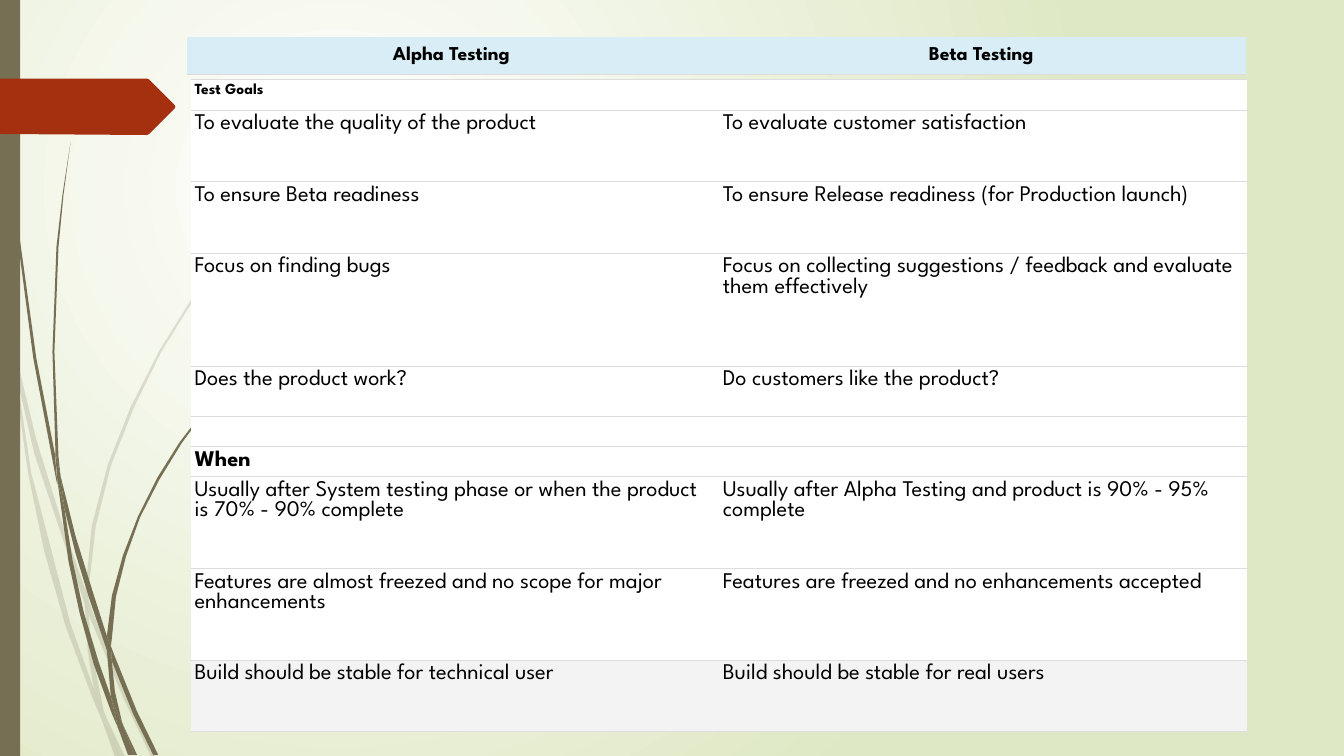
import pptx
import pptx.util
import pptx.dml.color
import pptx.enum.shapes
import pptx.enum.text
import pptx.oxml
import pptx.oxml.ns
import lxml.etree

COLS, ROWS = 1333, 750
FONT = "League Spartan"
OLIVE, RUST, WHITE, GREEN = "766F54", "A53010", "FFFFFF", "DFE8C4"
BLACK, GREY, BLUE, RULE = "000000", "F3F3F3", "D9EDF7", "DDDDDD"

PALE = [
    [(11, 350), (9, 322), (0, 282), (0, 299), (10, 344)],
    [(58, 522), (84, 599), (85, 586), (62, 520), (36, 436), (14, 345), (17, 376), (34, 450)],
    [(92, 607), (88, 596), (88, 610), (123, 694), (150, 751), (155, 751), (127, 692)],
    [(119, 751), (124, 751), (105, 711)],
    [(93, 683), (70, 619), (31, 469), (17, 376), (11, 350), (28, 470), (44, 547),
     (65, 621), (92, 693), (101, 714), (99, 707)],
    [(84, 599), (87, 646), (93, 683), (96, 692), (105, 711), (103, 706), (91, 646),
     (88, 610), (88, 608)],
    [(88, 584), (95, 522), (110, 462), (133, 404), (160, 349), (193, 296), (229, 245),
     (268, 198), (290, 175), (312, 154), (312, 153), (289, 175), (268, 197), (228, 244),
     (191, 295), (158, 348), (130, 403), (107, 461), (91, 522), (85, 584), (85, 586), (88, 596)],
    [(101, 714), (114, 751), (119, 751)],
    [(88, 608), (88, 596), (85, 586), (84, 599)],
    [(96, 692), (93, 683), (99, 707), (101, 714), (119, 751), (105, 711)],
]
DARK = [
    [(7, 110), (17, 233), (33, 355), (56, 477), (57, 481), (55, 457), (55, 453),
     (36, 355), (19, 232), (8, 109), (5, 48), (4, 0), (3, 0), (4, 48)],
    [(88, 592), (106, 645), (106, 631), (93, 590), (75, 532), (60, 472), (64, 505), (75, 549)],
    [(113, 649), (110, 641), (111, 656), (132, 708), (152, 749), (157, 749), (136, 706)],
    [(110, 691), (98, 657), (83, 607), (72, 556), (64, 505), (57, 477), (68, 557),
     (79, 608), (93, 659), (111, 708), (117, 722), (116, 717)],
    [(60, 472), (58, 453), (54, 349), (58, 245), (63, 193), (70, 141), (62, 193),
     (56, 245), (52, 349), (55, 449)],
    [(133, 749), (136, 749), (122, 719)],
    [(57, 477), (64, 505), (60, 472), (55, 449), (55, 453)],
    [(111, 633), (115, 592), (125, 552), (139, 513), (158, 476), (180, 440), (205, 406),
     (231, 374), (245, 359), (261, 344), (260, 344), (245, 358), (231, 373), (204, 405),
     (178, 439), (156, 474), (137, 512), (122, 551), (111, 591), (106, 631), (110, 641)],
    [(117, 722), (127, 749), (131, 749)],
    [(106, 645), (110, 691), (116, 706), (122, 719), (121, 716), (114, 686), (111, 656), (109, 651)],
    [(106, 645), (109, 651), (111, 656), (110, 641), (106, 631)],
    [(116, 706), (110, 691), (116, 717), (117, 722), (130, 749), (133, 749), (122, 719)],
]
TAG = [(0, 78), (146, 78), (148, 79), (173, 104), (174, 106), (173, 108),
       (148, 133), (146, 134), (0, 133)]

GOALS = [
    (30, "Test Goals", ""),
    (71, "To evaluate the quality of the product", "To evaluate customer satisfaction"),
    (71, "To ensure Beta readiness", "To ensure Release readiness (for Production launch)"),
    (112, "Focus on finding bugs",
     "Focus on collecting suggestions / feedback and evaluate them effectively"),
    (50, "Does the product work?", "Do customers like the product?"),
    (30, "", ""),
    (30, "When", ""),
    (91, "Usually after System testing phase or when the product is 70% - 90% complete",
     "Usually after Alpha Testing and product is 90% - 95% complete"),
    (91, "Features are almost freezed and no scope for major enhancements",
     "Features are freezed and no enhancements accepted"),
    (71, "Build should be stable for technical user", "Build should be stable for real users"),
]
HEADS = [(37, "Alpha Testing", "Beta Testing")]


def tint(code):
    return pptx.dml.color.RGBColor.from_string(code)


def apply(thing, form):
    for name, value in form.items():
        setattr(thing, name, value)


class Page:
    def __init__(self, deck):
        self.slide = deck.slides.add_slide(deck.slide_layouts[6])
        self.shapes = self.slide.shapes
        self.cell = deck.slide_width / COLS

    def span(self, count):
        return pptx.util.Emu(round(count * self.cell))

    def node(self, host, tag, **marks):
        return lxml.etree.SubElement(host, pptx.oxml.ns.qn(tag), marks)

    def glow(self, inner, outer):
        fill = self.slide.background.fill
        fill.gradient()
        for stop, code in zip(fill.gradient_stops, (inner, outer)):
            stop.color.rgb = tint(code)
        grad = next(self.slide.element.iter(pptx.oxml.ns.qn("a:gradFill")))
        grad.remove(grad.find(pptx.oxml.ns.qn("a:lin")))
        ring = self.node(grad, "a:path", path="circle")
        self.node(ring, "a:fillToRect", l="50000", t="50000", r="100000", b="100000")

    def paint(self, shape, code, alpha=100):
        shape.shadow.inherit = False
        shape.fill.solid()
        shape.fill.fore_color.rgb = tint(code)
        shape.line.fill.background()
        if alpha < 100:
            hue = next(shape.element.spPr.iter(pptx.oxml.ns.qn("a:srgbClr")))
            self.node(hue, "a:alpha", val=str(alpha * 1000))

    def leaf(self, points, code, alpha=100):
        pen = self.shapes.build_freeform(*points[0], scale=self.cell)
        pen.add_line_segments(points[1:], close=True)
        self.paint(pen.convert_to_shape(), code, alpha)

    def block(self, left, top, wide, high, code):
        kind = pptx.enum.shapes.MSO_SHAPE.RECTANGLE
        box = self.shapes.add_shape(kind, *map(self.span, (left, top, wide, high)))
        self.paint(box, code)

    def edge(self, cell, sides):
        props = cell._tc.get_or_add_tcPr()
        for place, side in enumerate("LRTB"):
            line = self.node(props, "a:ln" + side, w=str(pptx.util.Pt(0.6)))
            if side in sides:
                hue = self.node(line, "a:solidFill")
                self.node(hue, "a:srgbClr", val=RULE)
            else:
                self.node(line, "a:noFill")
            props.insert(place, line)

    def label(self, cell, text, size, bold, align):
        para = cell.text_frame.paragraphs[0]
        para.alignment = align
        if text:
            run = para.add_run()
            run.text = text
            apply(run.font, {"name": FONT, "size": pptx.util.Pt(size), "bold": bold})
            run.font.color.rgb = tint(BLACK)
        else:
            end = self.node(para._p, "a:endParaRPr", sz=str(size * 100))
            self.node(end, "a:latin", typeface=FONT)

    def table(self, left, top, wide, rows, look, sides, pad, anchor, align=None):
        high = sum(row[0] for row in rows)
        frame = self.shapes.add_table(len(rows), 2, *map(self.span, (left, top, wide, high)))
        grid = frame.table
        apply(grid, {"first_row": False, "horz_banding": False})
        names = ("margin_left", "margin_right", "margin_top", "margin_bottom")
        form = dict.fromkeys(names, self.span(pad)) | {"vertical_anchor": anchor}
        for col in grid.columns:
            col.width = self.span(wide / 2)
        for i, (tall, *texts) in enumerate(rows):
            grid.rows[i].height = self.span(tall)
            for j, text in enumerate(texts):
                cell = grid.cell(i, j)
                size, bold, code = look(i, text)
                apply(cell, form)
                cell.fill.solid()
                cell.fill.fore_color.rgb = tint(code)
                self.edge(cell, sides)
                self.label(cell, text, size, bold, align)


def goal_look(row, text):
    size = 11 if row == 0 else 16
    code = GREY if row == len(GOALS) - 1 else WHITE
    return size, text in ("Test Goals", "When"), code


def head_look(row, text):
    return 14, True, BLUE


def main():
    deck = pptx.Presentation()
    apply(deck, {"slide_width": pptx.util.Inches(13.33), "slide_height": pptx.util.Inches(7.5)})
    page = Page(deck)
    page.glow(WHITE, GREEN)
    for leaves, alpha in ((PALE, 20), (DARK, 100)):
        for points in leaves:
            page.leaf(points, OLIVE, alpha)
    page.block(0, 0, 20, ROWS, OLIVE)
    page.leaf(TAG, RUST)
    anchor = pptx.enum.text.MSO_ANCHOR
    page.table(189, 79, 1048, GOALS, goal_look, "TB", 4, anchor.TOP)
    page.table(185, 37, 1051, HEADS, head_look, "B", 3, anchor.MIDDLE,
               pptx.enum.text.PP_ALIGN.CENTER)
    deck.save("out.pptx")


if __name__ == "__main__":
    main()
